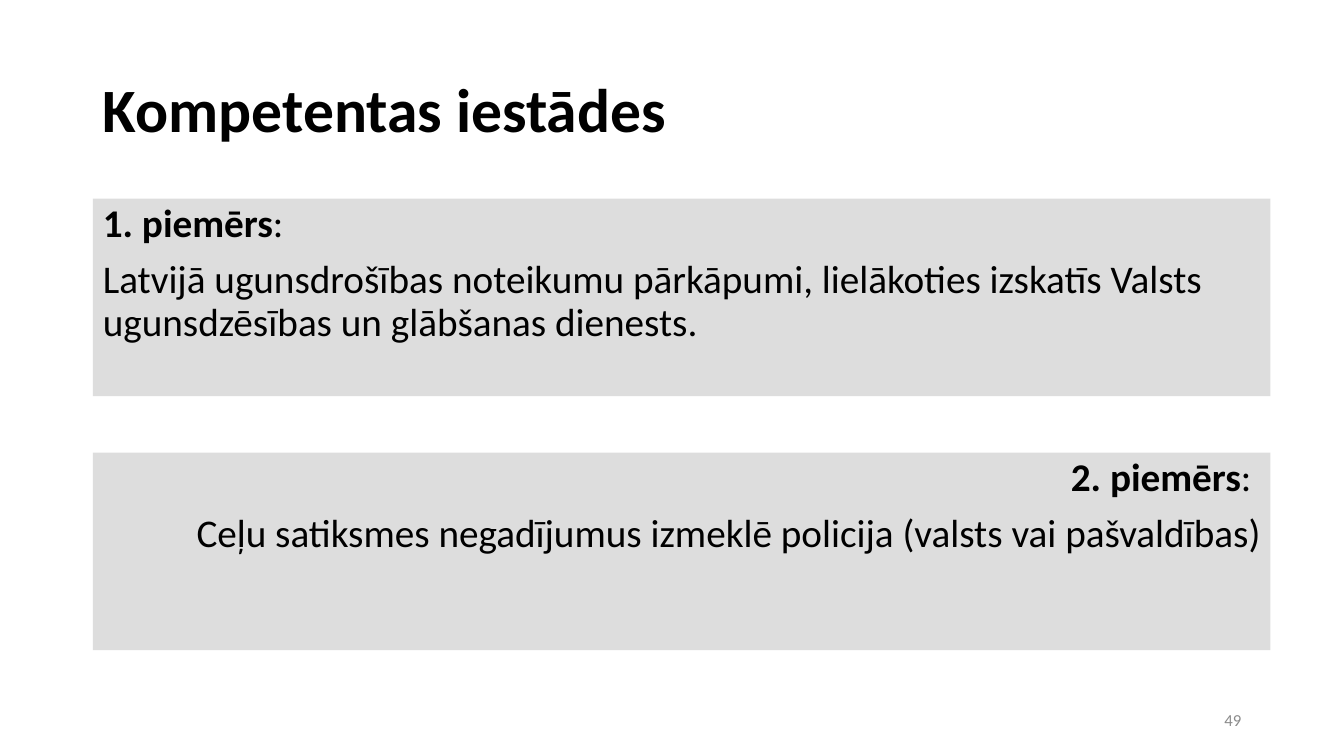
from pptx import Presentation
from pptx.dml.color import RGBColor
from pptx.enum.text import MSO_ANCHOR, MSO_AUTO_SIZE, PP_ALIGN
from pptx.util import Inches, Pt
from lxml.etree import SubElement

NS = "{http://schemas.openxmlformats.org/drawingml/2006/main}"


def paint(target, color):
    """Set a font colour from a hex string."""
    target.rgb = RGBColor.from_string(color)


def write(par, text, font="Calibri", size=28, color="000000", bold=False):
    """Add one formatted run to a paragraph."""
    run = par.add_run()
    run.text = text
    run.font.name = font
    run.font.size = Pt(size)
    run.font.bold = bold
    paint(run.font.color, color)


class Deck:
    """Hold the style and the current slide."""

    fill = "DDDDDD"
    grey = "8B8B8B"
    left = 0.92

    def __init__(self):
        """Open a wide deck with one slide of a title and two bodies."""
        self.prs = Presentation()
        self.prs.slide_width = Inches(13.33)
        self.prs.slide_height = Inches(7.5)
        self.slide = self.prs.slides.add_slide(self.prs.slide_layouts[3])

    def place(self, shape, box, anchor):
        """Set the box of a shape and return its text frame."""
        shape.left, shape.top, shape.width, shape.height = map(Inches, box)
        frame = shape.text_frame
        frame.word_wrap = True
        frame.auto_size = MSO_AUTO_SIZE.NONE
        frame.vertical_anchor = anchor
        return frame

    def title(self, text):
        """Fill the title placeholder."""
        box = (self.left, 0.4, 11.49, 1.44)
        frame = self.place(self.slide.shapes.title, box, MSO_ANCHOR.MIDDLE)
        par = frame.paragraphs[0]
        par.alignment = PP_ALIGN.LEFT
        par.line_spacing = 0.9
        write(par, text, size=44, bold=True)

    def panel(self, index, top, align, head, mark, text):
        """Fill a body placeholder as a grey panel with a bold heading."""
        body = self.slide.placeholders[index]
        box = (self.left, top, 11.68, 1.96)
        frame = self.place(body, box, MSO_ANCHOR.TOP)
        body.fill.solid()
        paint(body.fill.fore_color, self.fill)
        pars = frame.paragraphs[0], frame.add_paragraph()
        for par in pars:
            par.alignment = align
            par.line_spacing = 0.9
            par.space_before = Pt(10)
            props = par._p.get_or_add_pPr()
            props.set("marL", "0")
            props.set("indent", "0")
            SubElement(props, NS + "buNone")
        write(pars[0], head, bold=True)
        write(pars[0], mark)
        write(pars[1], text)

    def number(self, text):
        """Add the slide number."""
        box = (9.42, 6.95, 2.99, 0.39)
        shape = self.slide.shapes.add_textbox(*map(Inches, box))
        par = self.place(shape, box, MSO_ANCHOR.MIDDLE).paragraphs[0]
        par.alignment = PP_ALIGN.RIGHT
        write(par, text, size=12, color=self.grey)


def main():
    """Build and save the slide."""
    deck = Deck()
    deck.title("Kompetentas iestādes")
    deck.panel(1, 1.97, PP_ALIGN.LEFT, "1. piemērs", ":",
               "Latvijā ugunsdrošības noteikumu pārkāpumi, lielākoties izskatīs "
               "Valsts ugunsdzēsības un glābšanas dienests.")
    deck.panel(2, 4.49, PP_ALIGN.RIGHT, "2. piemērs", ": ",
               "Ceļu satiksmes negadījumus izmeklē policija "
               "(valsts vai pašvaldības)")
    deck.number("49")
    deck.prs.save("out.pptx")


if __name__ == "__main__":
    main()
